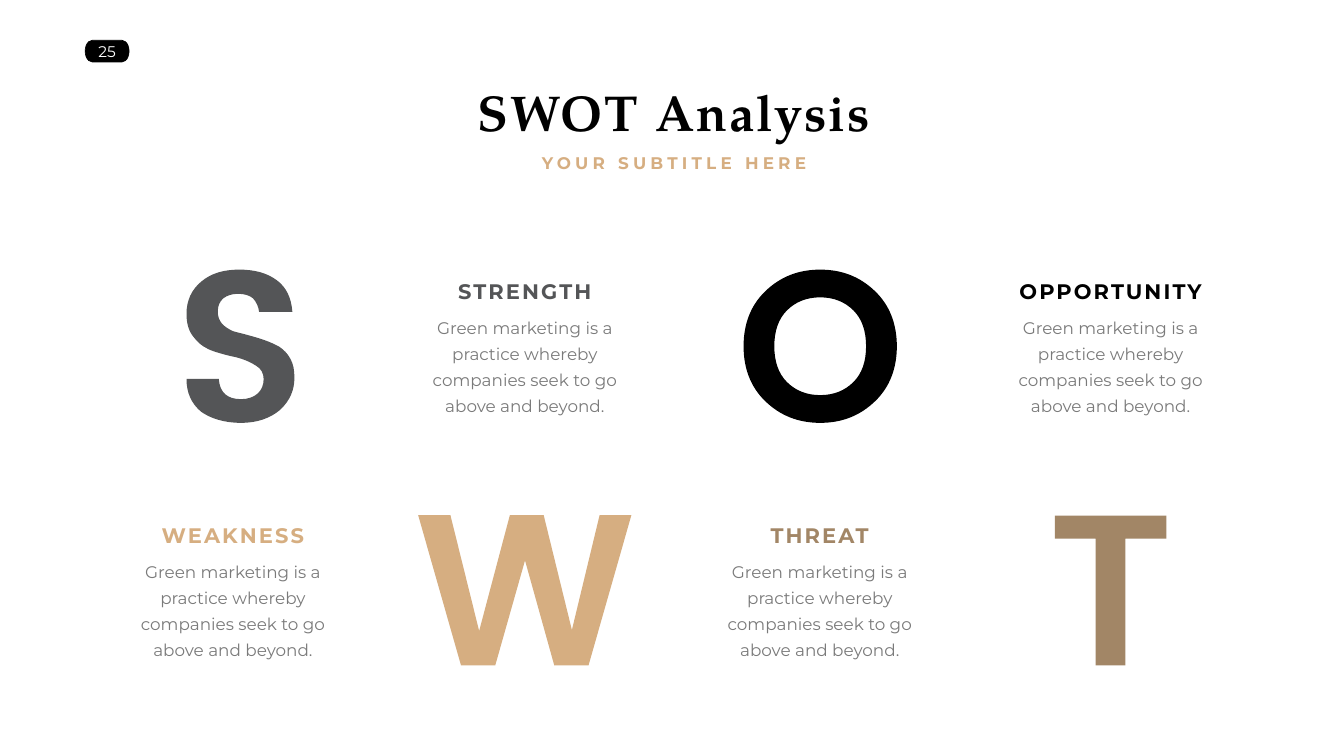
from dataclasses import dataclass

from lxml import etree
from pptx import Presentation
from pptx.dml.color import RGBColor
from pptx.enum.shapes import MSO_SHAPE
from pptx.enum.text import MSO_ANCHOR, MSO_AUTO_SIZE, PP_ALIGN
from pptx.oxml.ns import qn
from pptx.util import Inches, Pt

TOP, MIDDLE = MSO_ANCHOR.TOP, MSO_ANCHOR.MIDDLE
CENTER = PP_ALIGN.CENTER
GROW, FIXED = MSO_AUTO_SIZE.SHAPE_TO_FIT_TEXT, MSO_AUTO_SIZE.NONE
TERMINATOR = MSO_SHAPE.FLOWCHART_TERMINATOR


@dataclass(frozen=True)
class Theme:
    serif: str = "TeX Gyre Pagella"
    sans: str = "Montserrat"
    black: str = "000000"
    white: str = "FFFFFF"
    charcoal: str = "545557"
    gray: str = "7A7A7A"
    tan: str = "D6AE81"
    brown: str = "A28666"
    title_size: int = 72
    heading_size: int = 30
    body_size: int = 24
    badge_size: int = 22
    line_height: int = 37


THEME = Theme()

SLIDE_WIDTH, SLIDE_HEIGHT = 26.66, 15
TITLE_CENTRE = SLIDE_WIDTH / 2 + 0.04
COLUMN_CENTRES = (4.62, 10.41, 16.26, 22.03)
ROW_TOPS = (5.35, 10.2)
HEADING_DROP, BODY_DROP = 0.12, 0.79  # below the row top
HEADING_HEIGHT, BODY_WIDTH, BODY_HEIGHT = 0.61, 4.37, 2.13
UNITS_PER_INCH = 1000

BODY = "Green marketing is a practice whereby companies seek to go above and beyond."

# Outlines in inches from the letter's top left corner.
# Two numbers draw a straight line, six numbers a Bezier curve.
S_OUTLINE = [
    (1.03, 0.48), (0.9, 0.48, 0.81, 0.51, 0.73, 0.57),
    (0.66, 0.63, 0.62, 0.72, 0.62, 0.83), (0.62, 0.93, 0.65, 1.01, 0.71, 1.08),
    (0.76, 1.13, 0.83, 1.18, 0.92, 1.22), (1.01, 1.25, 1.12, 1.27, 1.22, 1.3),
    (1.33, 1.33, 1.44, 1.36, 1.55, 1.4), (1.66, 1.44, 1.75, 1.48, 1.84, 1.53),
    (1.93, 1.59, 2.01, 1.67, 2.06, 1.77), (2.12, 1.87, 2.14, 2, 2.14, 2.15),
    (2.14, 2.39, 2.05, 2.6, 1.86, 2.78), (1.66, 2.95, 1.4, 3.04, 1.08, 3.04),
    (0.76, 3.04, 0.49, 2.96, 0.29, 2.82), (0.1, 2.66, 0, 2.45, 0, 2.17),
    (0.64, 2.17), (0.66, 2.44, 0.81, 2.57, 1.08, 2.57),
    (1.22, 2.57, 1.33, 2.53, 1.41, 2.46), (1.49, 2.39, 1.53, 2.29, 1.53, 2.17),
    (1.53, 2.06, 1.48, 1.96, 1.37, 1.9), (1.26, 1.83, 1.14, 1.78, 0.99, 1.74),
    (0.84, 1.71, 0.69, 1.67, 0.54, 1.62), (0.39, 1.57, 0.26, 1.49, 0.16, 1.36),
    (0.05, 1.24, 0, 1.08, 0, 0.88), (0, 0.61, 0.1, 0.4, 0.29, 0.24),
    (0.49, 0.07, 0.74, 0, 1.05, 0), (1.36, 0, 1.6, 0.07, 1.79, 0.21),
    (1.98, 0.35, 2.08, 0.56, 2.1, 0.84), (1.44, 0.84),
    (1.43, 0.74, 1.39, 0.65, 1.32, 0.57), (1.25, 0.51, 1.14, 0.48, 1.03, 0.48),
]
W_OUTLINE = [
    (3.6, 0), (4.23, 0), (3.38, 2.98), (2.7, 2.98), (2.12, 0.9), (1.53, 2.98),
    (0.85, 2.98), (0, 0), (0.64, 0), (1.21, 2.3), (1.82, 0), (2.49, 0), (3.05, 2.28),
    (3.6, 0),
]
T_OUTLINE = [
    (0, 0), (2.21, 0), (2.21, 0.46), (1.4, 0.46),
    (1.4, 2.97), (0.81, 2.97), (0.81, 0.46), (0, 0.46), (0, 0),
]
# Bezier points of the upper right quarters of the O's two rings, from its centre.
O_CENTRE = 1.52
O_OUTER = [(0, -1.52), (0.43, -1.52), (0.79, -1.38), (1.09, -1.09),
           (1.38, -0.81), (1.52, -0.44), (1.52, 0)]
O_INNER = [(0, -0.97), (0.27, -0.97), (0.49, -0.88), (0.66, -0.71),
           (0.83, -0.54), (0.91, -0.3), (0.91, 0)]


def ring(quarter):
    """Mirror a quarter into a closed outline of Bezier curves."""
    right = quarter + [(x, -y) for x, y in quarter[-2::-1]]
    full = right + [(-x, y) for x, y in right[-2::-1]]
    points = [(O_CENTRE + x, O_CENTRE + y) for x, y in full]
    curves = [sum(points[i:i + 3], ()) for i in range(1, len(points), 3)]
    return [points[0]] + curves


def place(shape, centre, top, width, height):
    box = {"left": centre - width / 2, "top": top, "width": width, "height": height}
    for name, value in box.items():
        setattr(shape, name, Inches(value))


def paint(shape, color):
    shape.shadow.inherit = False
    shape.fill.solid()
    shape.fill.fore_color.rgb = RGBColor.from_string(color)


def write(shape, text, size, color, font=THEME.sans, bold=False, spacing=0,
          line_height=None, anchor=TOP, wrap=False, auto_size=GROW):
    frame = shape.text_frame
    frame.text = text
    paragraph = frame.paragraphs[0]
    run = paragraph.runs[0]
    formats = (
        (frame, {"word_wrap": wrap, "auto_size": auto_size, "vertical_anchor": anchor}),
        (paragraph, {"alignment": CENTER, "space_before": Pt(0),
                     "line_spacing": Pt(line_height) if line_height else 1.0}),
        (run.font, {"name": font, "size": Pt(size), "bold": bold}),
    )
    for target, values in formats:
        for name, value in values.items():
            setattr(target, name, value)
    run.font.color.rgb = RGBColor.from_string(color)
    if spacing:
        run._r.get_or_add_rPr().set("spc", str(spacing * 100))


def add_page_badge(slide, number):
    badge = slide.shapes.add_shape(
        TERMINATOR, Inches(1.69), Inches(0.8), Inches(0.87), Inches(0.43))
    paint(badge, THEME.black)
    badge.line.color.rgb = RGBColor.from_string(THEME.black)
    badge.line.width = Pt(1)
    write(badge, number, THEME.badge_size, THEME.white, anchor=MIDDLE, auto_size=FIXED)


def bend(line, curve):
    """Replace a straight path segment by a Bezier curve."""
    bezier = etree.Element(qn("a:cubicBezTo"))
    for x, y in zip(curve[::2], curve[1::2]):
        etree.SubElement(bezier, qn("a:pt"), x=str(round(x * UNITS_PER_INCH)),
                         y=str(round(y * UNITS_PER_INCH)))
    line.getparent().replace(line, bezier)


def add_letter(slide, outlines, column, row, color, nudge_x=0, nudge_y=0):
    ends = [[(segment[-2] * UNITS_PER_INCH, segment[-1] * UNITS_PER_INCH)
             for segment in outline] for outline in outlines]
    builder = slide.shapes.build_freeform(*ends[0][0], scale=Inches(1) / UNITS_PER_INCH)
    builder.add_line_segments(ends[0][1:], close=True)
    for contour in ends[1:]:
        builder.move_to(*contour[0])
        builder.add_line_segments(contour[1:], close=True)
    letter = builder.convert_to_shape()
    segments = [segment for outline in outlines for segment in outline[1:]]
    for line, segment in zip(list(letter._element.iter(qn("a:lnTo"))), segments):
        if len(segment) == 6:
            bend(line, segment)
    letter.left = Inches(COLUMN_CENTRES[column] + nudge_x) - letter.width // 2
    letter.top = Inches(ROW_TOPS[row] + nudge_y)
    paint(letter, color)
    letter.line.fill.background()


def add_description(slide, heading, heading_width, column, row, color):
    centre, top = COLUMN_CENTRES[column], ROW_TOPS[row]
    heading_box = slide.shapes.add_textbox(0, 0, 0, 0)
    place(heading_box, centre, top + HEADING_DROP, heading_width, HEADING_HEIGHT)
    write(heading_box, heading, THEME.heading_size, color, bold=True, spacing=3,
          anchor=MIDDLE)
    body_box = slide.shapes.add_textbox(0, 0, 0, 0)
    place(body_box, centre, top + BODY_DROP, BODY_WIDTH, BODY_HEIGHT)
    write(body_box, BODY, THEME.body_size, THEME.gray,
          line_height=THEME.line_height, wrap=True)


def add_titles(slide):
    title, subtitle = slide.shapes.title, slide.placeholders[1]
    place(title, TITLE_CENTRE, 1.56, 8.77, 1.31)
    write(title, "SWOT Analysis", THEME.title_size, THEME.black,
          font=THEME.serif, bold=True, spacing=3)
    place(subtitle, TITLE_CENTRE, 2.87, 5.59, 0.57)
    write(subtitle, "YOUR SUBTITLE HERE", THEME.body_size, THEME.tan,
          bold=True, spacing=6, line_height=THEME.line_height)


def main():
    presentation = Presentation()
    presentation.slide_width = Inches(SLIDE_WIDTH)
    presentation.slide_height = Inches(SLIDE_HEIGHT)
    slide = presentation.slides.add_slide(presentation.slide_layouts[0])
    add_page_badge(slide, "25")
    add_titles(slide)
    add_letter(slide, [S_OUTLINE], 0, 0, THEME.charcoal, nudge_x=0.15)
    add_description(slide, "STRENGTH", 2.92, 1, 0, THEME.charcoal)
    add_letter(slide, [ring(O_OUTER), ring(O_INNER)], 2, 0, THEME.black, nudge_x=0.01)
    add_description(slide, "OPPORTUNITY", 3.91, 3, 0, THEME.black)
    add_description(slide, "WEAKNESS", 3.1, 0, 1, THEME.tan)
    add_letter(slide, [W_OUTLINE], 1, 1, THEME.tan, nudge_y=0.02)
    add_description(slide, "THREAT", 2.23, 2, 1, THEME.brown)
    add_letter(slide, [T_OUTLINE], 3, 1, THEME.brown, nudge_y=0.03)
    presentation.save("out.pptx")


if __name__ == "__main__":
    main()
